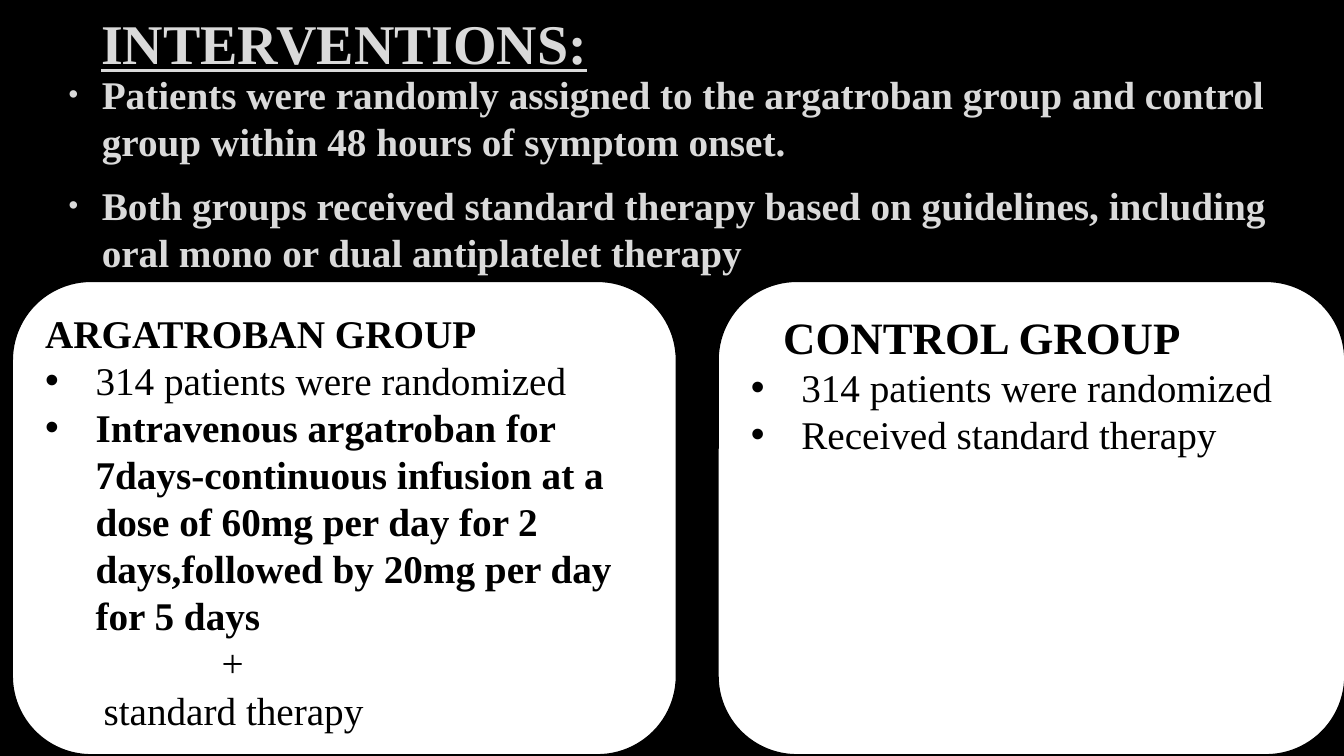
from lxml import etree
from pptx import Presentation
from pptx import util as u
from pptx.dml.color import RGBColor
from pptx.enum import shapes, text
from pptx.oxml.ns import qn

FONT = "Times New Roman"
INK, PAPER, PALE = "000000", "FFFFFF", "DADADA"
TOP, HIGH = 2.79, 4.7

INTRO = [
    "Patients were randomly assigned to the argatroban group and control group "
    "within 48 hours of symptom onset.",
    "Both groups received standard therapy based on guidelines, including "
    "oral mono or dual antiplatelet therapy",
]
DOSE = ("Intravenous argatroban for 7days-continuous infusion at a dose of 60mg "
        "per day for 2 days,followed by 20mg per day for 5 days")
# Each line: wording, size, bold, bulleted, left indent
DRUG = [
    ("ARGATROBAN GROUP", 28, True, False, 0),
    ("314 patients were randomized", 28, False, True, 0.5),
    (DOSE, 28, True, True, 0.5),
    ("+", 28, False, False, 1.75),
    ("standard therapy", 28, False, False, 0.58),
]
CONTROL = [
    ("CONTROL GROUP", 32, True, False, 0.32),
    ("314 patients were randomized", 28, False, True, 0.5),
    ("Received standard therapy", 28, False, True, 0.5),
]


def paint(part, tone):
    """Give a fill a solid colour from a hex string."""
    part.solid()
    part.fore_color.rgb = RGBColor.from_string(tone)


def place(shape, box):
    """Move a shape to a box of left, top, width and height in inches."""
    shape.left, shape.top, shape.width, shape.height = map(u.Inches, box)


def style(para, size, bold, tone):
    """Format every run of a paragraph."""
    for run in para.runs:
        run.font.name, run.font.size, run.font.bold = FONT, u.Pt(size), bold
        paint(run.font.fill, tone)


def indent(para, left, hang=0, scale=100):
    """Set a paragraph's indent, with a bullet where it hangs."""
    props = para._p.get_or_add_pPr()
    props.set("marL", str(u.Inches(left)))
    props.set("indent", str(-u.Inches(hang)))
    if hang:
        etree.SubElement(props, qn("a:buSzPct")).set("val", str(scale * 1000))
        etree.SubElement(props, qn("a:buFont")).set("typeface", "Arial")
        etree.SubElement(props, qn("a:buChar")).set("char", "•")


def head(shape, box):
    """Write the underlined heading."""
    place(shape, box)
    frame = shape.text_frame
    frame.text = "INTERVENTIONS:"
    frame.auto_size = text.MSO_AUTO_SIZE.NONE
    frame.vertical_anchor = text.MSO_ANCHOR.MIDDLE
    para = frame.paragraphs[0]
    para.alignment = text.PP_ALIGN.CENTER
    style(para, 40, True, PALE)
    para.runs[0].font.underline = True


def intro(shape, box):
    """Write the bulleted introduction."""
    place(shape, box)
    frame = shape.text_frame
    frame.text = "\n".join(INTRO)
    frame.auto_size = text.MSO_AUTO_SIZE.NONE
    for para in frame.paragraphs:
        para.space_before, para.space_after = u.Pt(5.6), u.Pt(6)
        indent(para, 0.38, 0.33, 70)
        style(para, 28, True, PALE)


def card(slide, box, lines):
    """Draw one rounded card describing a patient group."""
    shape = slide.shapes.add_shape(
        shapes.MSO_SHAPE.ROUNDED_RECTANGLE, *map(u.Inches, box))
    shape.shadow.inherit = False
    paint(shape.fill, PAPER)
    paint(shape.line.fill, INK)
    shape.line.width = u.Pt(1.25)
    frame = shape.text_frame
    frame.word_wrap = True
    frame.vertical_anchor = text.MSO_ANCHOR.TOP
    frame.text = "\n".join(line[0] for line in lines)
    for para, (_, size, bold, dot, left) in zip(frame.paragraphs, lines):
        para.alignment = text.PP_ALIGN.LEFT
        indent(para, left, left if dot else 0)
        style(para, size, bold, INK)


def main():
    """Build the slide and save it."""
    deck = Presentation()
    deck.slide_width, deck.slide_height = u.Inches(13.33), u.Inches(7.5)
    slide = deck.slides.add_slide(deck.slide_layouts[1])
    paint(slide.background.fill, INK)
    head(slide.shapes.title, (-1.73, 0, 10.29, 0.83))
    intro(slide.placeholders[1], (0.53, 0.65, 12.35, 6.19))
    card(slide, (0.12, TOP, 6.59, HIGH), DRUG)
    card(slide, (7.12, TOP, 6.22, HIGH), CONTROL)
    deck.save("out.pptx")


if __name__ == "__main__":
    main()
